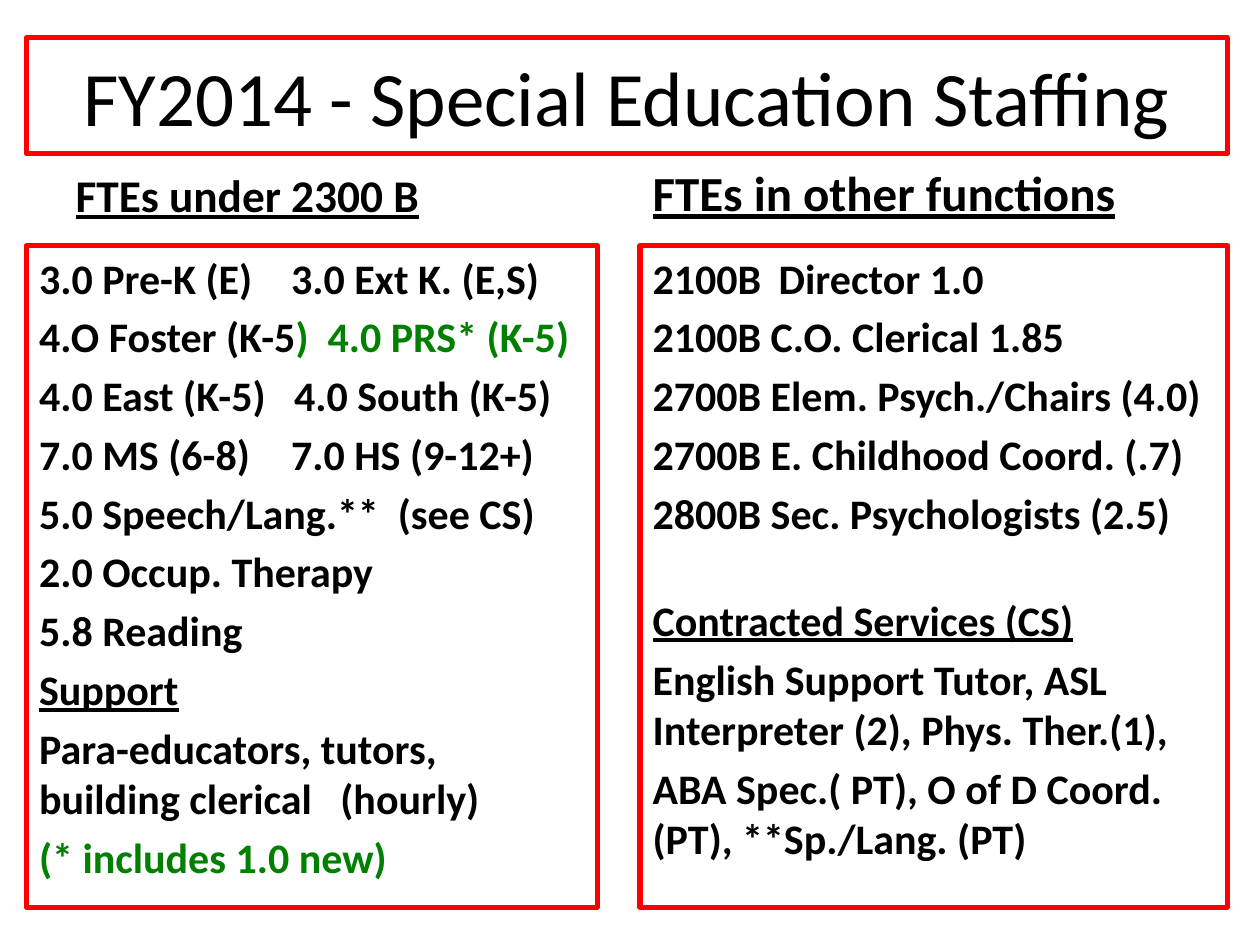
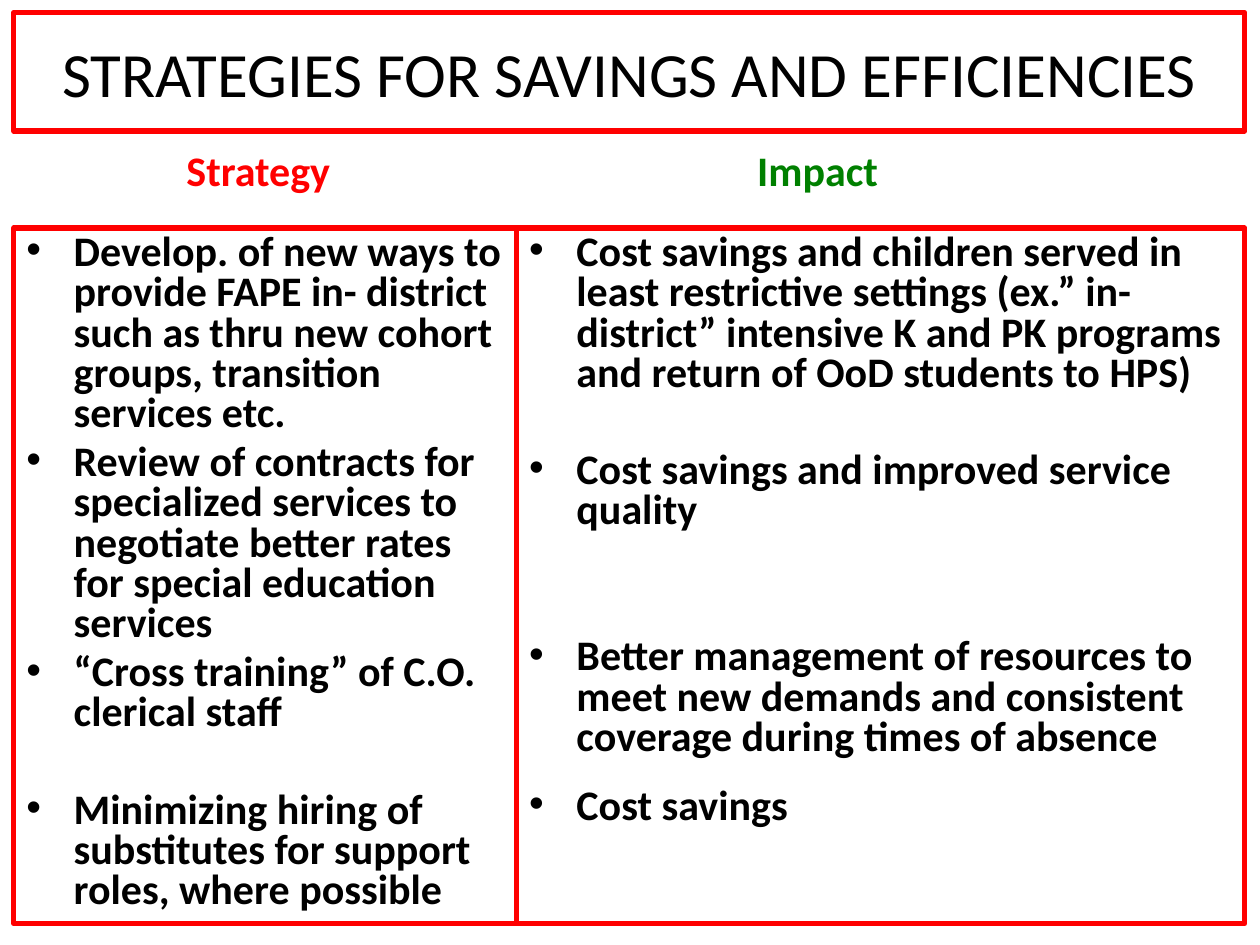
import dataclasses
import pptx
import pptx.dml.color
import pptx.enum.text
import pptx.oxml.ns
import pptx.util
from lxml import etree

Inches = pptx.util.Inches
Pt = pptx.util.Pt
Color = pptx.dml.color.RGBColor.from_string


@dataclasses.dataclass(frozen=True)
class Theme:
    font: str = "Calibri"
    text: str = "000000"
    frame: str = "FF0000"
    accent: str = "008000"
    frame_width: float = 3
    body_size: float = 24


theme = Theme()


def place(shape, box, anchor, framed):
    shape.left, shape.top, shape.width, shape.height = [Inches(length) for length in box]
    shape.text_frame.word_wrap = True
    shape.text_frame.auto_size = pptx.enum.text.MSO_AUTO_SIZE.NONE
    shape.text_frame.vertical_anchor = anchor
    if framed:
        shape.line.color.rgb = Color(theme.frame)
        shape.line.width = Pt(theme.frame_width)


def write(paragraph, text, size=theme.body_size, color=theme.text, bold=True, underline=False,
          green_tail="", gap=None, spacing=None, align=None, margin=None, bullet=True):
    properties = paragraph._p.get_or_add_pPr()
    if margin is not None:
        properties.set("marL", str(Inches(margin)))
        properties.set("indent", "0")
    if not bullet:
        etree.SubElement(properties, pptx.oxml.ns.qn("a:buNone"))
    if gap:
        paragraph.space_before = Pt(gap)
    if spacing:
        paragraph.line_spacing = spacing
    if align:
        paragraph.alignment = align
    paragraph.font.name = theme.font
    paragraph.font.size = Pt(size)
    paragraph.font.bold = bold
    paragraph.font.underline = underline
    for run_text, run_color in ((text, color), (green_tail, theme.accent)):
        if run_text:
            run = paragraph.add_run()
            run.text = run_text
            run.font.color.rgb = Color(run_color)


anchors = pptx.enum.text.MSO_ANCHOR
center = pptx.enum.text.PP_ALIGN.CENTER

slides = [
    {
        "title": "FY2014 - Special Education Staffing",
        "title_box": (0.21, 0.3, 9.53, 0.92),
        "title_size": 44,
        "list_style": {"bullet": False, "margin": 0},
        "columns": [
            {
                "heading": {"text": "FTEs under 2300 B", "size": 25.9, "underline": True},
                "heading_box": (0.5, 1.35, 4.42, 0.46),
                "list_box": (0.21, 1.95, 4.53, 5.25),
                "items": [
                    {"text": "3.0 Pre-K (E)\t3.0 Ext K. (E,S)"},
                    {"text": "4.O Foster (K-5", "green_tail": ")  4.0 PRS* (K-5)"},
                    {"text": "4.0 East (K-5)   4.0 South (K-5)"},
                    {"text": "7.0 MS (6-8)\t7.0 HS (9-12+)"},
                    {"text": "5.0 Speech/Lang.**  (see CS)"},
                    {"text": "2.0 Occup. Therapy"},
                    {"text": "5.8 Reading"},
                    {"text": "Support", "underline": True},
                    {"text": "Para-educators, tutors, building clerical   (hourly)"},
                    {"text": "(* includes 1.0 new)", "color": theme.accent},
                ],
            },
            {
                "heading": {"text": "FTEs in other functions", "size": 28, "underline": True},
                "heading_box": (5.08, 1.35, 4.42, 0.46),
                "list_box": (5.08, 1.95, 4.66, 5.25),
                "items": [
                    {"text": "2100B\tDirector 1.0"},
                    {"text": "2100B C.O. Clerical 1.85"},
                    {"text": "2700B Elem. Psych./Chairs (4.0)"},
                    {"text": "2700B E. Childhood Coord. (.7)"},
                    {"text": "2800B Sec. Psychologists (2.5)"},
                    {"text": "Contracted Services (CS)", "underline": True, "gap": 32.4},
                    {"text": "English Support Tutor, ASL Interpreter (2), Phys. Ther.(1),"},
                    {"text": "ABA Spec.( PT), O of D Coord. (PT), **Sp./Lang. (PT)"},
                ],
            },
        ],
    },
    {
        "title": "STRATEGIES FOR SAVINGS AND EFFICIENCIES",
        "title_box": (0.11, 0.1, 9.77, 0.94),
        "title_size": 36,
        "list_style": {"spacing": 0.8},
        "columns": [
            {
                "heading": {"text": "Strategy", "color": theme.frame, "align": center},
                "heading_box": (0, 0.9, 4.1, 0.7),
                "list_box": (0.11, 1.81, 3.99, 5.52),
                "items": [
                    {"text": "Develop. of new ways to provide FAPE in- district such as thru new "
                             "cohort groups, transition services etc."},
                    {"text": "Review of contracts for specialized services to negotiate better "
                             "rates for special education services"},
                    {"text": "“Cross training” of C.O. clerical staff"},
                    {"text": "Minimizing hiring of substitutes for support roles, where possible",
                     "gap": 32.4},
                ],
            },
            {
                "heading": {"text": "Impact", "color": theme.accent, "margin": 1.5},
                "heading_box": (4.41, 0.9, 5.1, 0.7),
                "list_box": (4.1, 1.81, 5.78, 5.52),
                "items": [
                    {"text": "Cost savings and children served in least restrictive settings "
                             "(ex.” in-district” intensive K and PK programs and return of OoD "
                             "students to HPS)"},
                    {"text": "Cost savings and improved service quality", "gap": 32.4},
                    {"text": "Better management of resources to meet new demands and consistent "
                             "coverage during times of absence", "gap": 60.4},
                    {"text": "Cost savings", "spacing": 1.2},
                ],
            },
        ],
    },
]

presentation = pptx.Presentation()
presentation.slide_width = Inches(10)
presentation.slide_height = Inches(7.5)
comparison_layout = presentation.slide_layouts.get_by_name("Comparison")

for content in slides:
    slide = presentation.slides.add_slide(comparison_layout)
    title = slide.shapes.title
    place(title, content["title_box"], anchors.MIDDLE, framed=True)
    write(title.text_frame.paragraphs[0], content["title"], size=content["title_size"],
          bold=False, align=center)

    for column, heading_index in zip(content["columns"], (1, 3)):
        heading = slide.placeholders[heading_index]
        place(heading, column["heading_box"], anchors.BOTTOM, framed=False)
        write(heading.text_frame.paragraphs[0], **column["heading"])

        listing = slide.placeholders[heading_index + 1]
        place(listing, column["list_box"], anchors.TOP, framed=True)
        for position, item in enumerate(column["items"]):
            frame = listing.text_frame
            paragraph = frame.add_paragraph() if position else frame.paragraphs[0]
            write(paragraph, **{**content["list_style"], **item})

presentation.save("out.pptx")
